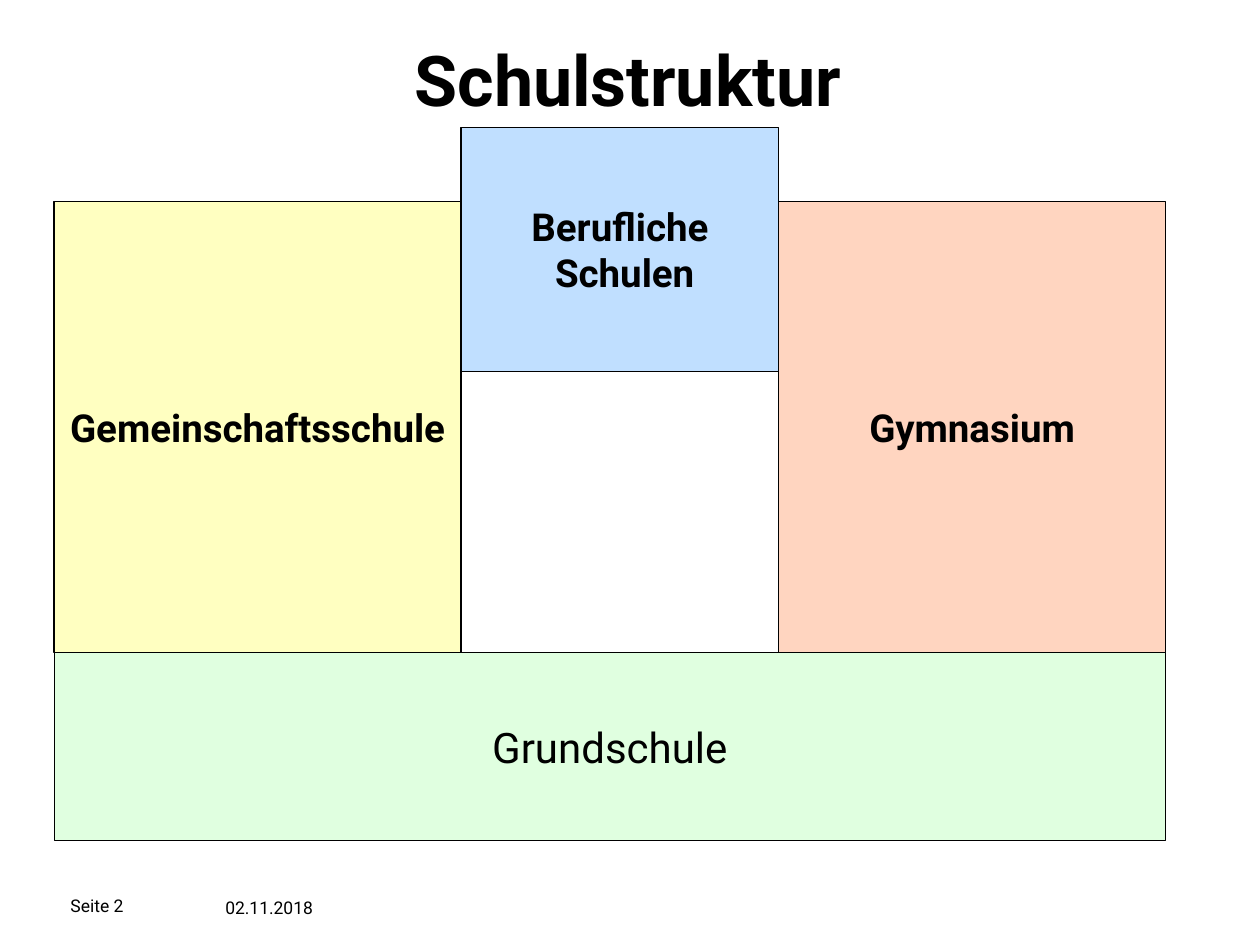
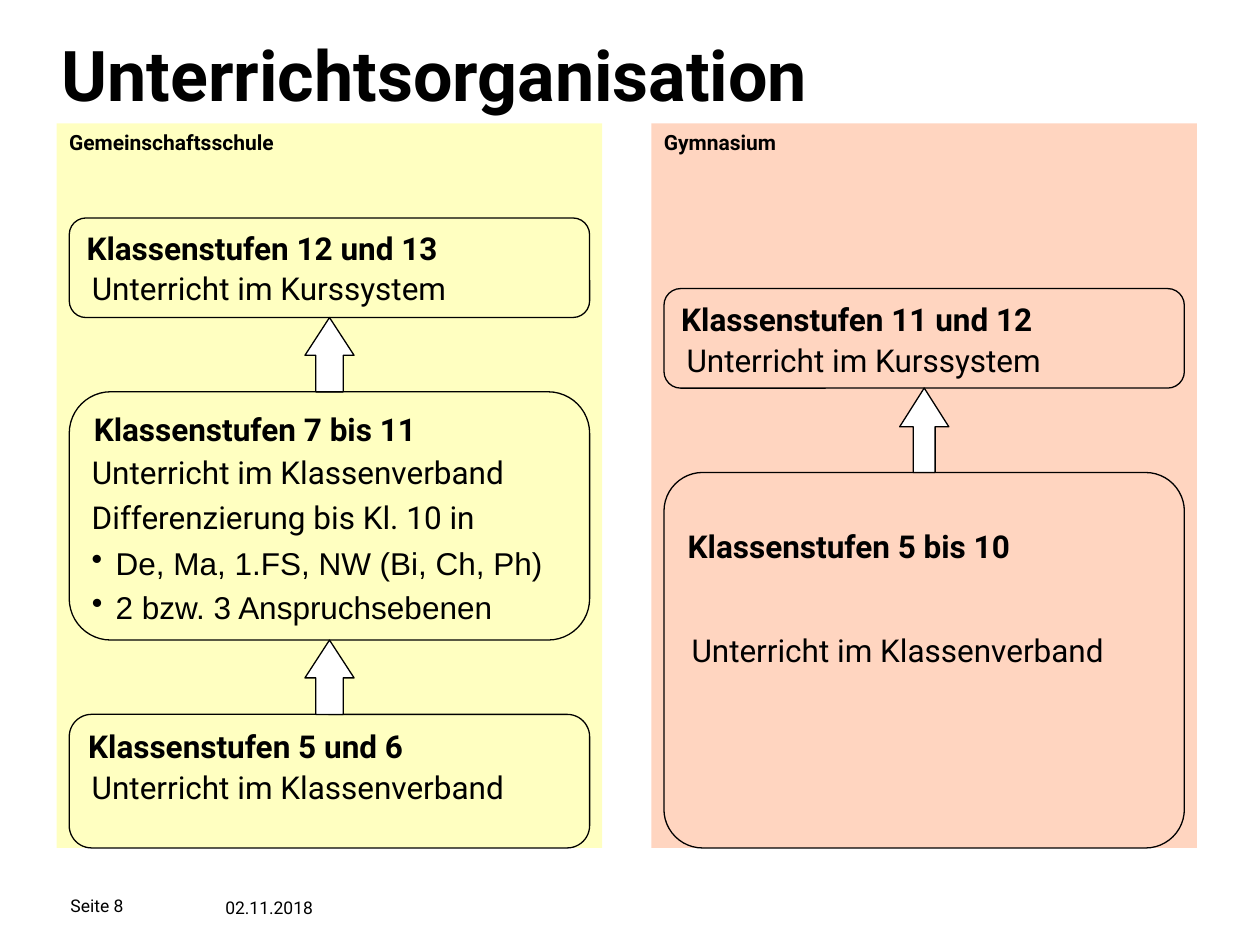
from lxml.etree import SubElement
from pptx import Presentation
from pptx.dml.color import RGBColor
from pptx.enum.shapes import MSO_SHAPE
from pptx.enum.text import MSO_ANCHOR, MSO_AUTO_SIZE, PP_ALIGN
from pptx.oxml.ns import qn
from pptx.util import Inches, Pt

COLORS = {"text": "000000", "line": "000000", "arrow": "FFFFFF", "primary": "CCFFCC",
          "gymnasium": "FFBA97", "community": "FFFF99", "vocational": "96CAFF"}
TINT_ALPHA = 60
FONT = "Roboto"
DATE = "02.11.2018"

# Title, its box (left, top, width, height) and page label of each slide
STRUCTURE = ("Schulstruktur", (3.19, 0.24, 3.8, 0.78), "Seite 2")
TEACHING = ("Unterrichtsorganisation", (0.39, 0.2, 6.44, 0.78), "Seite 8")

# Label, box, colour, font format
SCHOOLS = [
    ("Grundschule", (0.43, 5.18, 8.82, 1.49), "primary", {"size": 24}),
    ("Gymnasium", (6.18, 1.6, 3.07, 3.58), "gymnasium", {"size": 22, "bold": True}),
    ("Gemeinschaftsschule", (0.43, 1.6, 3.23, 3.58), "community", {"size": 22, "bold": True}),
    ("Berufliche\v Schulen", (3.66, 1.01, 2.52, 1.94), "vocational", {"size": 22, "bold": True}),
]

# Stages run from top to bottom; lines are (text, offset in column, top, width, height, bullet)
COLUMNS = [
    {"name": "Gemeinschaftsschule", "left": 0.45, "color": "community", "label_width": 1.9,
     "arrow": (0.557, 0.769),
     "stages": [
         {"name": "Klassenstufen 12 und 13", "top": 1.73, "height": 0.79},
         {"name": "Klassenstufen 7 bis 11", "top": 3.11, "height": 1.97},
         {"name": "Klassenstufen 5 und 6", "top": 5.67, "height": 1.06}],
     "lines": [
         ("Unterricht im Kurssystem", 0.18, 2.12, 3.12, 0.37, False),
         ("Unterricht im Klassenverband", 0.18, 3.58, 3.65, 0.37, False),
         ("Differenzierung bis Kl. 10 in", 0.18, 3.94, 3.4, 0.37, False),
         ("De, Ma, 1.FS, NW (Bi, Ch, Ph)", 0.18, 4.27, 3.9, 0.4, True),
         ("2 bzw. 3 Anspruchsebenen", 0.18, 4.62, 3.41, 0.4, True),
         ("Unterricht im Klassenverband", 0.18, 6.08, 3.74, 0.37, False)]},
    {"name": "Gymnasium", "left": 5.17, "color": "gymnasium", "label_width": 1.15,
     "arrow": (0.445, 0.789),
     "stages": [
         {"name": "Klassenstufen 11 und 12", "top": 2.29, "height": 0.79},
         {"name": "Klassenstufen 5 bis 10", "top": 3.75, "height": 2.98,
          "rounding": 0.103, "inset_top": 0.34}],
     "lines": [
         ("Unterricht im Kurssystem", 0.18, 2.69, 3.12, 0.37, False),
         ("Unterricht im Klassenverband", 0.22, 4.99, 3.74, 0.37, False)]},
]
COLUMN_TOP, COLUMN_WIDTH, COLUMN_HEIGHT = 0.98, 4.33, 5.75
STAGE_WIDTH, ARROW_WIDTH = 4.13, 0.39


def inches(box):
    return [Inches(v) for v in box]


def write(shape, text, size, bold=False, name=FONT, align=PP_ALIGN.LEFT, spacing=None,
          bullet=False, **frame):
    """Fill the shape with one paragraph; frame holds text frame attributes."""
    tf = shape.text_frame
    for key, value in {"word_wrap": True, "vertical_anchor": MSO_ANCHOR.TOP, **frame}.items():
        setattr(tf, key, value)
    p = tf.paragraphs[0]
    p.text = text
    p.alignment = align
    if spacing:
        p.line_spacing = spacing
    if bullet:
        pPr = p._p.get_or_add_pPr()
        pPr.set("marL", str(Inches(0.19)))
        pPr.set("indent", str(-Inches(0.19)))
        SubElement(pPr, qn("a:buChar")).set("char", "•")
    for r in p.runs:
        for key, value in {"size": Pt(size), "bold": bold, "name": name}.items():
            setattr(r.font, key, value)
        r.font.color.rgb = RGBColor.from_string(COLORS["text"])


def add_text(s, text, box, size, **fmt):
    write(s.shapes.add_textbox(*inches(box)), text, size, **fmt)


def add_block(s, kind, box, fill=None, tinted=False, outlined=True, adjust=()):
    sp = s.shapes.add_shape(kind, *inches(box))
    sp.shadow.inherit = False
    for i, value in enumerate(adjust):
        sp.adjustments[i] = value
    if fill:
        sp.fill.solid()
        sp.fill.fore_color.rgb = RGBColor.from_string(COLORS[fill])
    else:
        sp.fill.background()
    if tinted:
        color = sp._element.spPr.find(qn("a:solidFill")).find(qn("a:srgbClr"))
        SubElement(color, qn("a:alpha")).set("val", str(TINT_ALPHA * 1000))
    if outlined:
        sp.line.color.rgb = RGBColor.from_string(COLORS["line"])
        sp.line.width = Pt(0.75)
    else:
        sp.line.fill.background()
    return sp


def add_slide(prs, title, title_box, page):
    s = prs.slides.add_slide(prs.slide_layouts[5])
    t = s.shapes.title
    t.left, t.top, t.width, t.height = inches(title_box)
    write(t, title, 40, bold=True, auto_size=MSO_AUTO_SIZE.NONE)
    add_text(s, page, (0.56, 7.07, 1.26, 0.24), 10, vertical_anchor=MSO_ANCHOR.MIDDLE,
             margin_left=0, margin_top=0, margin_right=0, margin_bottom=0)
    add_text(s, DATE, (1.69, 7.07, 1.26, 0.24), 10)
    return s


def add_column(s, column):
    left, stages = column["left"], column["stages"]
    add_block(s, MSO_SHAPE.RECTANGLE, (left, COLUMN_TOP, COLUMN_WIDTH, COLUMN_HEIGHT),
              column["color"], tinted=True, outlined=False)
    add_text(s, column["name"], (left, COLUMN_TOP, column["label_width"], 0.3), 12, bold=True)

    stage_left = left + (COLUMN_WIDTH - STAGE_WIDTH) / 2
    for stage in stages:
        sp = add_block(s, MSO_SHAPE.ROUNDED_RECTANGLE,
                       (stage_left, stage["top"], STAGE_WIDTH, stage["height"]),
                       adjust=(stage.get("rounding", 0.167),))
        write(sp, stage["name"], 18, bold=True,
              margin_top=Inches(stage.get("inset_top", 0.05)))

    arrow_left = left + (COLUMN_WIDTH - ARROW_WIDTH) / 2
    for upper, lower in zip(stages, stages[1:]):
        top = upper["top"] + upper["height"]
        add_block(s, MSO_SHAPE.UP_ARROW, (arrow_left, top, ARROW_WIDTH, lower["top"] - top),
                  "arrow", adjust=column["arrow"])

    for text, offset, top, width, height, bullet in column["lines"]:
        fmt = {"name": "Arial", "bullet": True} if bullet else {"spacing": 0.9}
        add_text(s, text, (left + offset, top, width, height), 18, **fmt)


def main():
    prs = Presentation()
    prs.slide_width, prs.slide_height = Inches(10), Inches(7.5)

    s = add_slide(prs, *STRUCTURE)
    for name, box, color, fmt in SCHOOLS:
        sp = add_block(s, MSO_SHAPE.RECTANGLE, box, color, tinted=True)
        write(sp, name, align=PP_ALIGN.CENTER, word_wrap=False,
              vertical_anchor=MSO_ANCHOR.MIDDLE, **fmt)

    s = add_slide(prs, *TEACHING)
    for column in COLUMNS:
        add_column(s, column)

    prs.save("out.pptx")


if __name__ == "__main__":
    main()
